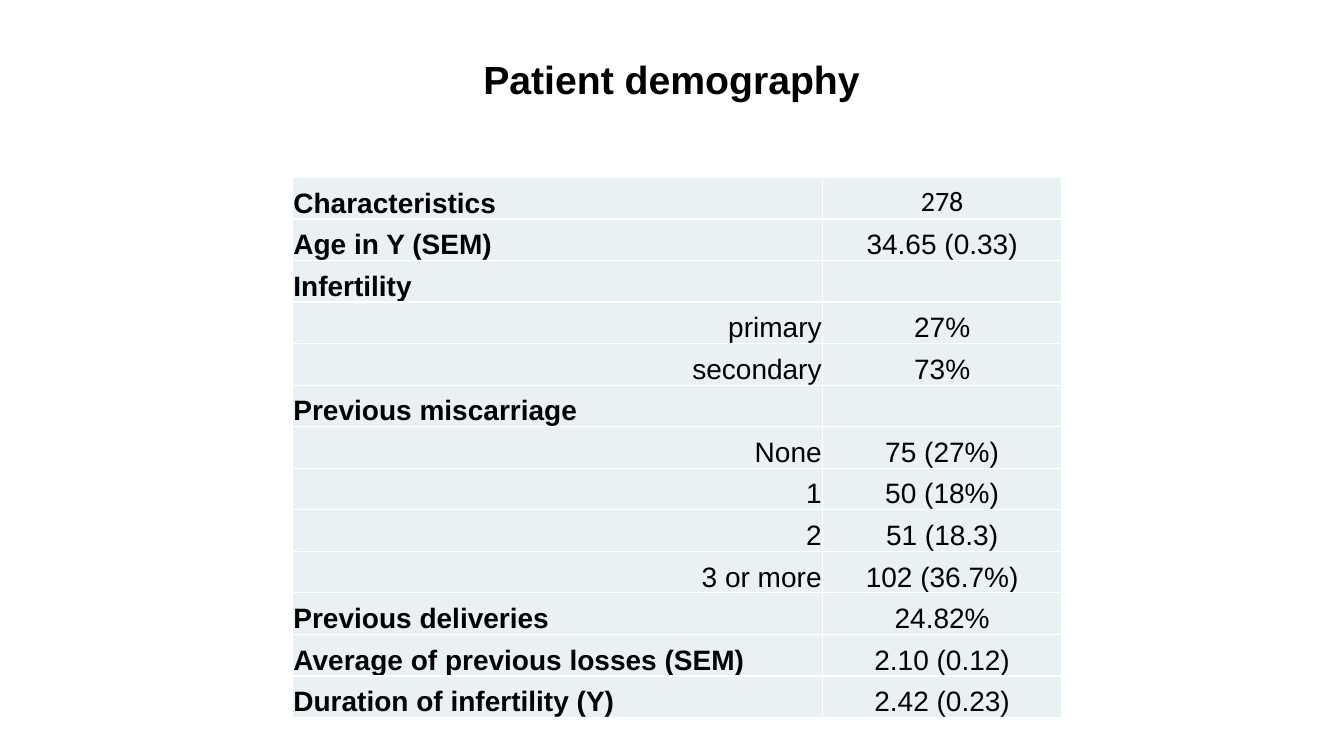
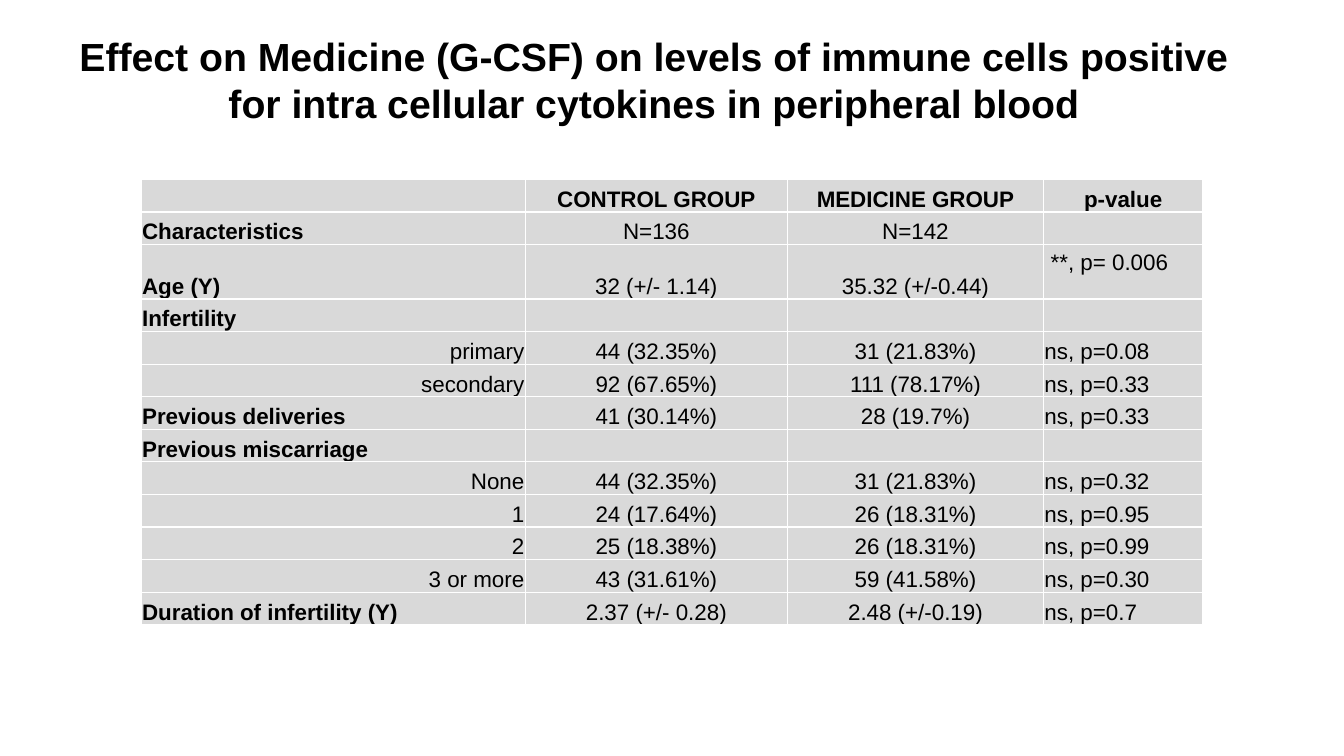
from dataclasses import dataclass

from lxml.etree import SubElement
from pptx import Presentation
from pptx.dml.color import RGBColor
from pptx.enum.text import MSO_ANCHOR as Anchor, PP_ALIGN as Align
from pptx.oxml.ns import qn
from pptx.util import Inches, Pt


@dataclass(frozen=True)
class Theme:
    font: str = "Arial"
    count_font: str = "Calibri"
    ink: str = "000000"
    rule: str = "FFFFFF"
    pale_blue: str = "E9F1F5"
    grey: str = "D9D9D9"
    title_size: int = 28
    large: int = 20
    small: int = 16
    rule_width: int = 1
    inset: float = 0.01


THEME = Theme()
TITLE_ONLY = 5
SUB_ROWS = {"primary", "secondary", "None", "1", "2", "3 or more"}

DEMOGRAPHY = [
    ("Characteristics", "278"),
    ("Age in Y (SEM)", "34.65 (0.33)"),
    ("Infertility", ""),
    ("primary", "27%"),
    ("secondary", "73%"),
    ("Previous miscarriage", ""),
    ("None", "75 (27%)"),
    ("1", "50 (18%)"),
    ("2", "51 (18.3)"),
    ("3 or more", "102 (36.7%)"),
    ("Previous deliveries", "24.82%"),
    ("Average of previous losses (SEM)", "2.10 (0.12)"),
    ("Duration of infertility (Y)", "2.42 (0.23)"),
]

GROUPS = [
    ("", "CONTROL GROUP", "MEDICINE GROUP", "p-value"),
    ("Characteristics", "N=136", "N=142", ""),
    ("Age (Y)", "32 (+/- 1.14)", "35.32 (+/-0.44)", " **, p= 0.006"),
    ("Infertility", "", "", ""),
    ("primary", "44 (32.35%)", "31 (21.83%)", "ns, p=0.08"),
    ("secondary", "92 (67.65%)", "111 (78.17%)", "ns, p=0.33"),
    ("Previous deliveries", "41 (30.14%)", "28 (19.7%)", "ns, p=0.33"),
    ("Previous miscarriage", "", "", ""),
    ("None", "44 (32.35%)", "31 (21.83%)", "ns, p=0.32"),
    ("1", "24 (17.64%)", "26 (18.31%)", "ns, p=0.95"),
    ("2", "25 (18.38%)", "26 (18.31%)", "ns, p=0.99"),
    ("3 or more", "43 (31.61%)", "59 (41.58%)", "ns, p=0.30"),
    ("Duration of infertility (Y)", "2.37 (+/- 0.28)", "2.48 (+/-0.19)", "ns, p=0.7"),
]


def add_run(p, text, size, bold, font=THEME.font):
    r = p.add_run()
    r.text = text
    r.font.name, r.font.size, r.font.bold = font, Pt(size), bold
    r.font.color.rgb = RGBColor.from_string(THEME.ink)


def add_titled_slide(prs, text, box):
    slide = prs.slides.add_slide(prs.slide_layouts[TITLE_ONLY])
    title = slide.shapes.title
    title.left, title.top, title.width, title.height = map(Inches, box)
    p = title.text_frame.paragraphs[0]
    p.alignment = Align.CENTER
    add_run(p, text, THEME.title_size, True)
    return slide


def rule_cell(cell):
    """Draw the thin rule on all four sides of a cell."""
    props = cell._tc.get_or_add_tcPr()
    for side in ("lnL", "lnR", "lnT", "lnB"):
        line = SubElement(props, qn(f"a:{side}"), w=str(Pt(THEME.rule_width)))
        fill = SubElement(line, qn("a:solidFill"))
        SubElement(fill, qn("a:srgbClr"), val=THEME.rule)


def cell_style(row, col, header):
    """Return alignment and weight from the cell's place in the table."""
    if header:
        return Align.CENTER, True
    if col == 0:
        sub = row[0] in SUB_ROWS
        return (Align.RIGHT if sub else Align.LEFT), not sub
    return (Align.LEFT if col == 3 else Align.CENTER), False


def add_data_table(slide, rows, box, col_widths, fill, size, has_header=False):
    left, top, width, height = map(Inches, box)
    frame = slide.shapes.add_table(len(rows), len(col_widths), left, top, width, height)
    table = frame.table
    table.first_row = table.horz_banding = False
    for column, w in zip(table.columns, col_widths):
        column.width = Inches(w)
    for i, row in enumerate(rows):
        for j, text in enumerate(row):
            cell = table.cell(i, j)
            rule_cell(cell)
            cell.fill.solid()
            cell.fill.fore_color.rgb = RGBColor.from_string(fill)
            cell.vertical_anchor = Anchor.BOTTOM
            cell.margin_left = cell.margin_right = cell.margin_top = Inches(THEME.inset)
            cell.margin_bottom = 0
            if text:
                p = cell.text_frame.paragraphs[0]
                p.alignment, bold = cell_style(row, j, has_header and i == 0)
                font = THEME.count_font if text == "278" else THEME.font
                add_run(p, text, size, bold, font)
    return table


def demography_slide(prs):
    slide = add_titled_slide(prs, "Patient demography", (2.19, 0.5, 8.94, 0.57))
    add_data_table(slide, DEMOGRAPHY, (2.9, 1.76, 7.63, 5.36), (5.26, 2.37),
                   THEME.pale_blue, THEME.large)


def groups_slide(prs):
    slide = add_titled_slide(
        prs,
        "Effect on Medicine (G-CSF) on levels of immune cells positive "
        "for intra cellular cytokines in peripheral blood",
        (0.51, 0.27, 11.95, 1.04))
    height, age_row, age_height = 4.42, 2, 0.54
    table = add_data_table(slide, GROUPS, (1.4, 1.78, 10.53, height),
                           (3.81, 2.6, 2.54, 1.58), THEME.grey, THEME.small, True)
    for i, row in enumerate(table.rows):
        share = (height - age_height) / (len(GROUPS) - 1)
        row.height = Inches(age_height if i == age_row else share)
    table.cell(age_row, 3).margin_bottom = Inches(0.24)


def main():
    prs = Presentation()
    prs.slide_width, prs.slide_height = Inches(13.33), Inches(7.5)
    demography_slide(prs)
    groups_slide(prs)
    prs.save("out.pptx")


if __name__ == "__main__":
    main()
